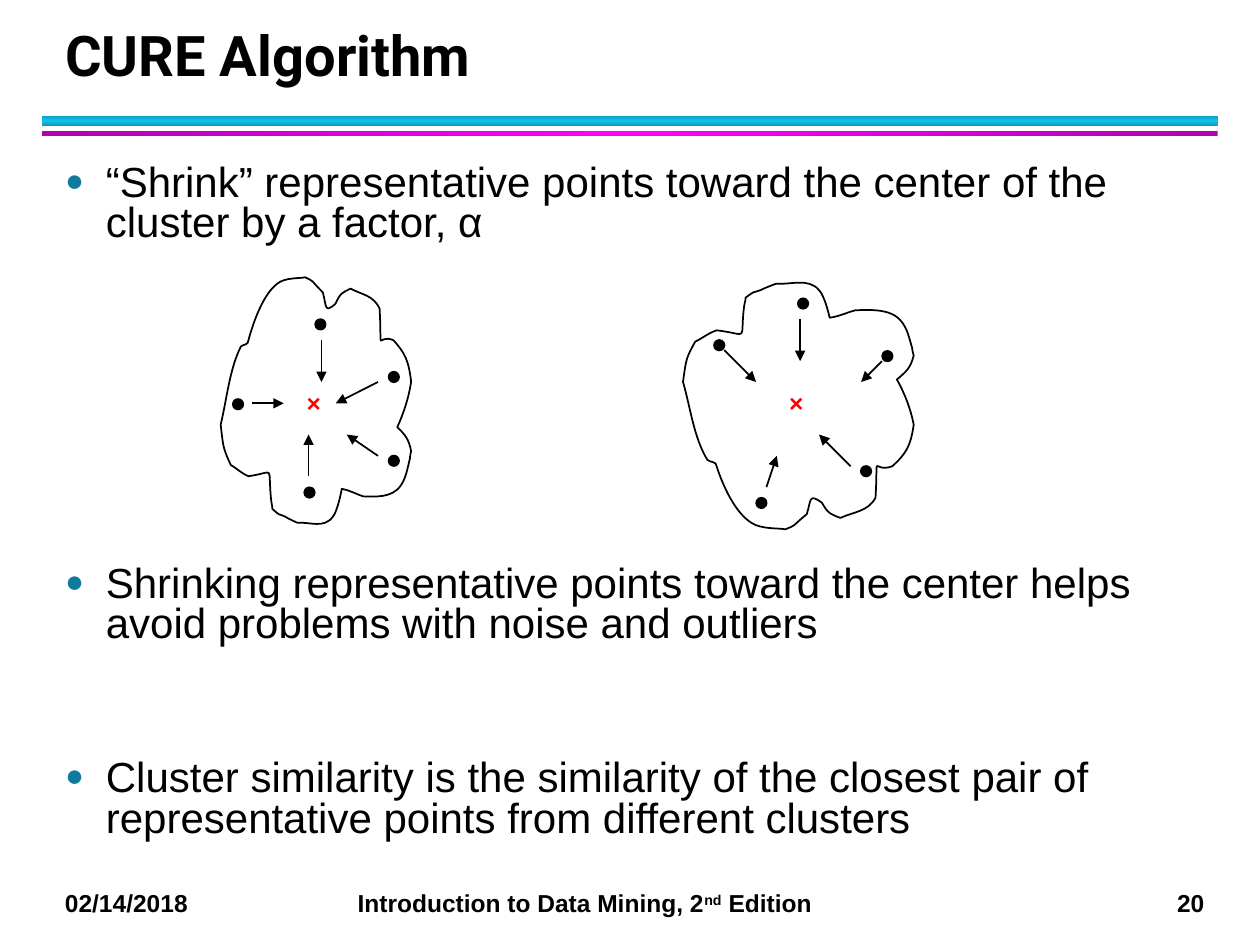
import copy

import lxml.etree
import pptx
import pptx.dml.color
import pptx.enum.shapes
import pptx.enum.text
import pptx.oxml.ns
import pptx.util

Cm = pptx.util.Cm
Pt = pptx.util.Pt
qn = pptx.oxml.ns.qn

INK = {"black": "000000", "red": "FF0000", "teal": "0C7B9C",
       "cyan": "12C2E9", "dark cyan": "0E9BBA",
       "pink": "FF00FF", "dark pink": "B200B2"}

TITLE = "CURE Algorithm"
# text, points of space before
ITEMS = [
    ("“Shrink” representative points toward the center of the cluster by a factor, α", 0),
    ("Shrinking representative points toward the center helps avoid problems with noise and outliers", 183),
    ("Cluster similarity is the similarity of the closest pair of representative points from different clusters", 65),
]
# text, raised
FOOT = [("02/14/2018", False), ("\tIntroduction to Data Mining, 2", False),
        ("nd", True), (" Edition", False), ("\t20", False)]
TABS = [(5.9, "l"), (22.97, "r")]
# top, height, edge colour, middle colour, angle
RULES = [(2.33, 0.21, "dark cyan", "cyan", 90),
         (2.65, 0.1, "dark pink", "pink", 0)]

# Cluster outline on a 151 by 195 grid: a start, then Bezier curves of three points
START = (16, 55)
CURVES = [
    ((7, 73), (5, 96), (0, 117)), ((2, 135), (2, 136), (8, 149)),
    ((13, 152), (17, 156), (22, 158)), ((44, 155), (37, 148), (40, 177)),
    ((40, 179), (41, 181), (41, 184)), ((48, 190), (44, 187), (51, 190)),
    ((54, 192), (61, 195), (61, 195)), ((70, 194), (82, 200), (89, 190)),
    ((93, 185), (96, 168), (96, 168)), ((102, 169), (107, 172), (113, 174)),
    ((121, 174), (136, 176), (143, 165)), ((147, 159), (148, 152), (150, 144)),
    ((150, 142), (151, 138), (151, 138)), ((149, 128), (146, 125), (140, 119)),
    ((145, 108), (149, 96), (151, 83)), ((149, 66), (146, 60), (137, 50)),
    ((123, 44), (128, 65), (126, 25)), ((121, 14), (112, 14), (103, 9)),
    ((97, 12), (95, 12), (91, 21)), ((82, 29), (84, 23), (81, 12)),
    ((70, 1), (75, 4), (67, 0)), ((63, 1), (51, 0), (45, 5)),
    ((34, 13), (26, 35), (22, 50)), ((22, 54), (18, 53), (16, 55)),
]
GRID = (151, 195)
DOT = 0.21
# box is left, top, width, height (a negative height flips the outline);
# each point is its dot centre, arrow start, arrow end
GROUPS = [
    {"box": (4.45, 5.59, 3.84, 4.95), "mid": (5.93, 7.7), "points": [
        ((6.24, 9.93), (6.22, 9.6), (6.22, 8.76)),
        ((6.46, 6.54), (6.48, 6.86), (6.48, 7.7)),
        ((4.8, 8.15), (5.08, 8.13), (5.72, 8.13)),
        ((7.94, 7.6), (7.62, 7.7), (6.77, 8.13)),
        ((7.94, 9.29), (7.62, 9.19), (6.99, 8.76))]},
    {"box": (13.77, 10.67, 4.65, -4.95), "mid": (15.66, 7.7), "points": [
        ((17.89, 7.18), (17.78, 7.28), (17.36, 7.7)),
        ((14.5, 6.96), (14.6, 7.06), (15.24, 7.7)),
        ((15.35, 10.14), (15.45, 9.82), (15.66, 9.19)),
        ((16.19, 6.12), (16.13, 6.43), (16.13, 7.28)),
        ((17.46, 9.5), (17.15, 9.4), (16.51, 8.76))]},
]


def tint(name):
    return pptx.dml.color.RGBColor.from_string(INK[name])


def place(shape, left, top, width, height):
    shape.left, shape.top = Cm(left), Cm(top)
    shape.width, shape.height = Cm(width), Cm(height)


def write(para, text, size, face="Arial", ink="black", bold=False):
    run = para.add_run()
    run.text = text
    run.font.size, run.font.name, run.font.bold = Pt(size), face, bold
    run.font.color.rgb = tint(ink)
    return run


def add_xml(node, tag, **attrs):
    return lxml.etree.SubElement(node, qn(tag), attrs)


def add_box(slide, left, top, width, height):
    """Add a wrapping text box and return its first paragraph."""
    box = slide.shapes.add_textbox(Cm(left), Cm(top), Cm(width), Cm(height))
    box.text_frame.word_wrap = True
    return box.text_frame.paragraphs[0]


def add_title(slide):
    title = slide.shapes.title
    place(title, 1.06, 0.42, 23.02, 1.48)
    frame = title.text_frame
    frame.auto_size = pptx.enum.text.MSO_AUTO_SIZE.NONE
    frame.vertical_anchor = pptx.enum.text.MSO_ANCHOR.BOTTOM
    para = frame.paragraphs[0]
    para.alignment = pptx.enum.text.PP_ALIGN.LEFT
    para.line_spacing = Pt(36)
    write(para, TITLE, 32, "Roboto", bold=True)


def add_list(slide):
    body = slide.placeholders[1]
    place(body, 1.06, 3.18, 23.11, 14.4)
    frame = body.text_frame
    frame.auto_size = pptx.enum.text.MSO_AUTO_SIZE.NONE
    frame.margin_top = Cm(0.15)
    for i, (text, gap) in enumerate(ITEMS):
        para = frame.add_paragraph() if i else frame.paragraphs[0]
        props = para._p.get_or_add_pPr()
        props.set("marL", str(Cm(0.82)))
        props.set("indent", str(-Cm(0.82)))
        add_xml(add_xml(props, "a:buClr"), "a:srgbClr", val=INK["teal"])
        add_xml(props, "a:buSzPct", val="75000")
        add_xml(props, "a:buFont", typeface="Arial")
        add_xml(props, "a:buChar", char="●")
        para.line_spacing = 0.8
        para.space_before, para.space_after = Pt(gap), Pt(0)
        write(para, text, 24)


def add_foot(slide):
    para = add_box(slide, 1.06, 17.78, 23.7, 0.86)
    tabs = add_xml(para._p.get_or_add_pPr(), "a:tabLst")
    for pos, side in TABS:
        add_xml(tabs, "a:tab", pos=str(Cm(pos)), algn=side)
    for text, raised in FOOT:
        run = write(para, text, 14, bold=True)
        if raised:
            run.font._element.set("baseline", "30000")


def add_rule(slide, top, height, edge, middle, angle):
    bar = slide.shapes.add_shape(pptx.enum.shapes.MSO_SHAPE.RECTANGLE,
                                 Cm(0.85), Cm(top), Cm(23.7), Cm(height))
    bar.shadow.inherit = False
    bar.line.fill.background()
    bar.fill.gradient()
    bar.fill.gradient_angle = angle
    stops = bar._element.find(".//" + qn("a:gsLst"))
    stops.insert(1, copy.deepcopy(stops[0]))
    for i, stop in enumerate(bar.fill.gradient_stops):
        stop.position = i / 2
        stop.color.rgb = tint(middle if i == 1 else edge)


def add_blob(slide, box):
    """Draw the outline, turning each three line steps into one curve."""
    left, top, width, height = box

    def spot(dot):
        return (Cm(left + dot[0] / GRID[0] * width),
                Cm(top + dot[1] / GRID[1] * height))

    pen = slide.shapes.build_freeform(*spot(START))
    pen.add_line_segments([spot(dot) for curve in CURVES for dot in curve])
    blob = pen.convert_to_shape()
    steps = list(blob._element.iter(qn("a:lnTo")))
    for i in range(0, len(CURVES) * 3, 3):
        curve = lxml.etree.Element(qn("a:cubicBezTo"))
        steps[i].addprevious(curve)
        for step in steps[i:i + 3]:
            curve.append(step[0])
            step.getparent().remove(step)
    blob.shadow.inherit = False
    blob.fill.background()
    blob.line.color.rgb, blob.line.width = tint("black"), Pt(1)


def add_dot(slide, x, y):
    dot = slide.shapes.add_shape(pptx.enum.shapes.MSO_SHAPE.OVAL, Cm(x - DOT / 2),
                                 Cm(y - DOT / 2), Cm(DOT), Cm(DOT))
    dot.shadow.inherit = False
    dot.fill.solid()
    dot.fill.fore_color.rgb = dot.line.color.rgb = tint("black")
    dot.line.width = Pt(1)


def add_arrow(slide, start, end):
    arrow = slide.shapes.add_connector(pptx.enum.shapes.MSO_CONNECTOR.STRAIGHT,
                                       *map(Cm, start + end))
    arrow.line.color.rgb, arrow.line.width = tint("black"), Pt(1)
    add_xml(arrow.line._get_or_add_ln(), "a:tailEnd", type="triangle")
    add_xml(arrow._element.spPr, "a:effectLst")


def main():
    deck = pptx.Presentation()
    deck.slide_width, deck.slide_height = Cm(25.4), Cm(19.05)
    slide = deck.slides.add_slide(deck.slide_layouts[1])
    for rule in RULES:
        add_rule(slide, *rule)
    add_foot(slide)
    add_list(slide)
    add_title(slide)
    for group in GROUPS:
        add_blob(slide, group["box"])
        for dot, start, end in group["points"]:
            add_dot(slide, *dot)
            add_arrow(slide, start, end)
        write(add_box(slide, *group["mid"], 0.64, 0.84), "×", 14, ink="red", bold=True)
    deck.save("out.pptx")


if __name__ == "__main__":
    main()
